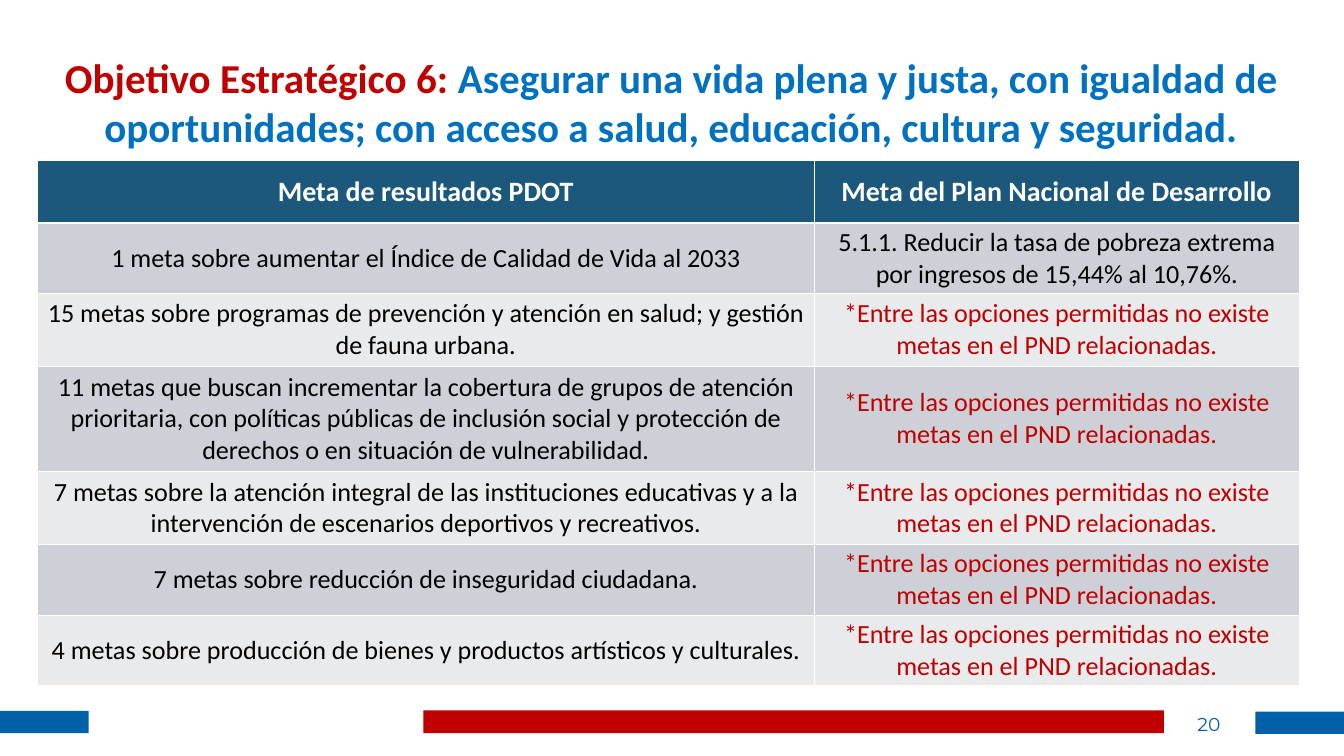
from pptx import Presentation
from pptx.dml.color import RGBColor
from pptx.enum.shapes import MSO_SHAPE
from pptx.enum.text import MSO_ANCHOR, MSO_AUTO_SIZE, PP_ALIGN
from pptx.oxml import parse_xml
from pptx.oxml.ns import nsdecls
from pptx.util import Inches, Pt

COLUMNS, ROWS = 20, 11.25  # grid of one-inch squares
RED, BLUE, BRIGHT_BLUE, NAVY = "C00000", "0060A8", "0070C0", "1B587C"
BANDS = ("CDD1D7", "E8EAEC")
BLACK, WHITE = "000000", "FFFFFF"
NO_GOAL = "*Entre las opciones permitidas no existe metas en el PND relacionadas."

HEADER = ("Meta de resultados PDOT", "Meta del Plan Nacional de Desarrollo")
GOALS = [
    ("1 meta sobre aumentar el Índice de Calidad de Vida al 2033",
     "5.1.1. Reducir la tasa de pobreza extrema por ingresos de 15,44% al 10,76%."),
    ("15 metas sobre programas de prevención y atención en salud; y gestión "
     "de fauna urbana.", NO_GOAL),
    ("11 metas que buscan incrementar la cobertura de grupos de atención "
     "prioritaria, con políticas públicas de inclusión social y protección de "
     "derechos o en situación de vulnerabilidad.", NO_GOAL),
    ("7 metas sobre la atención integral de las instituciones educativas y a la "
     "intervención de escenarios deportivos y recreativos.", NO_GOAL),
    ("7 metas sobre reducción de inseguridad ciudadana.", NO_GOAL),
    ("4 metas sobre producción de bienes y productos artísticos y culturales.",
     NO_GOAL),
]
COLUMN_WIDTHS = (11.57, 7.21)
ROW_HEIGHTS = (0.93, 1.05, 1.08, 1.57, 1.08, 1.05, 1.05)


def color(hex_string):
    return RGBColor.from_string(hex_string)


class SlideBuilder:
    """Holds the style and the current slide; lengths are grid columns and rows."""

    font = "Calibri"

    def __init__(self, deck):
        self.slide = deck.slides.add_slide(deck.slide_layouts[5])
        self.slide.background.fill.solid()
        self.slide.background.fill.fore_color.rgb = color(WHITE)

    def add_spans(self, frame, spans, size, bold=False, font=None):
        """Fill a frame with one centred paragraph of (text, colour) spans."""
        frame.word_wrap = True
        para = frame.paragraphs[0]
        para.alignment = PP_ALIGN.CENTER
        for text, ink in spans:
            span = para.add_run()
            span.text = text
            span.font.name = font or self.font
            span.font.size = Pt(size)
            span.font.bold = bold
            span.font.color.rgb = color(ink)

    def frame(self, box):
        """Set the shared insets and anchor of a text box."""
        frame = box.text_frame
        frame.auto_size = MSO_AUTO_SIZE.NONE
        frame.vertical_anchor = MSO_ANCHOR.MIDDLE
        frame.margin_left = frame.margin_right = Inches(0.18)
        frame.margin_top = frame.margin_bottom = Inches(0.09)
        return frame

    def bar(self, left, top, width, height, fill):
        bar = self.slide.shapes.add_shape(
            MSO_SHAPE.RECTANGLE, *map(Inches, (left, top, width, height)))
        bar.shadow.inherit = False
        bar.fill.solid()
        bar.fill.fore_color.rgb = color(fill)
        bar.line.fill.background()

    def title(self, left, top, width, height, spans):
        box = self.slide.shapes.title
        box.left, box.top, box.width, box.height = map(
            Inches, (left, top, width, height))
        self.add_spans(self.frame(box), spans, 44, bold=True)

    def page_number(self, left, top, width, height, text):
        box = self.slide.shapes.add_textbox(
            *map(Inches, (left, top, width, height)))
        self.add_spans(self.frame(box), [(text, BLUE)], 20, font="Montserrat")

    def cell(self, cell, text, ink, fill, size, bold=False, bottom=1):
        cell.vertical_anchor = MSO_ANCHOR.MIDDLE
        self.add_spans(cell.text_frame, [(text, ink)], size, bold)
        properties = cell._tc.get_or_add_tcPr()
        for side, width in (("L", 1), ("R", 1), ("T", 1), ("B", bottom)):
            properties.append(parse_xml(
                f'<a:ln{side} {nsdecls("a")} w="{Pt(width)}"><a:solidFill>'
                f'<a:srgbClr val="{WHITE}"/></a:solidFill></a:ln{side}>'))
        cell.fill.solid()
        cell.fill.fore_color.rgb = color(fill)

    def table(self, left, top, widths, heights, header, body):
        table = self.slide.shapes.add_table(
            len(heights), len(widths), Inches(left), Inches(top),
            Inches(sum(widths)), Inches(sum(heights))).table
        table.horz_banding = False
        for column, width in zip(table.columns, widths):
            column.width = Inches(width)
        for row, height in zip(table.rows, heights):
            row.height = Inches(height)
        for column, text in enumerate(header):
            self.cell(table.cell(0, column), text, WHITE, NAVY, 30, True, 3)
        for row, texts in enumerate(body):
            for column, text in enumerate(texts):
                ink = RED if text == NO_GOAL else BLACK
                self.cell(table.cell(row + 1, column), text, ink,
                          BANDS[row % 2], 28)
        return table


def main():
    deck = Presentation()
    deck.slide_width, deck.slide_height = Inches(COLUMNS), Inches(ROWS)
    page = SlideBuilder(deck)
    page.bar(6.3, 10.57, 11.02, 0.34, RED)
    page.bar(0, 10.58, 1.32, 0.33, BLUE)
    page.bar(COLUMNS - 1.32, 10.59, 1.32, 0.33, BLUE)
    page.title(0, 0.83, COLUMNS, 1.36, [
        ("Objetivo Estratégico 6: ", RED),
        ("Asegurar una vida plena y justa, con igualdad de oportunidades; con "
         "acceso a salud, educación, cultura y seguridad.", BRIGHT_BLUE)])
    table = page.table(0.55, 2.39, COLUMN_WIDTHS, ROW_HEIGHTS, HEADER, GOALS)
    last = table.cell(len(GOALS), 0)
    last.margin_left = last.margin_right = last.margin_top = last.margin_bottom = 0
    page.page_number(17.52, 10.47, 0.94, 0.6, "20")
    deck.save("out.pptx")


if __name__ == "__main__":
    main()
